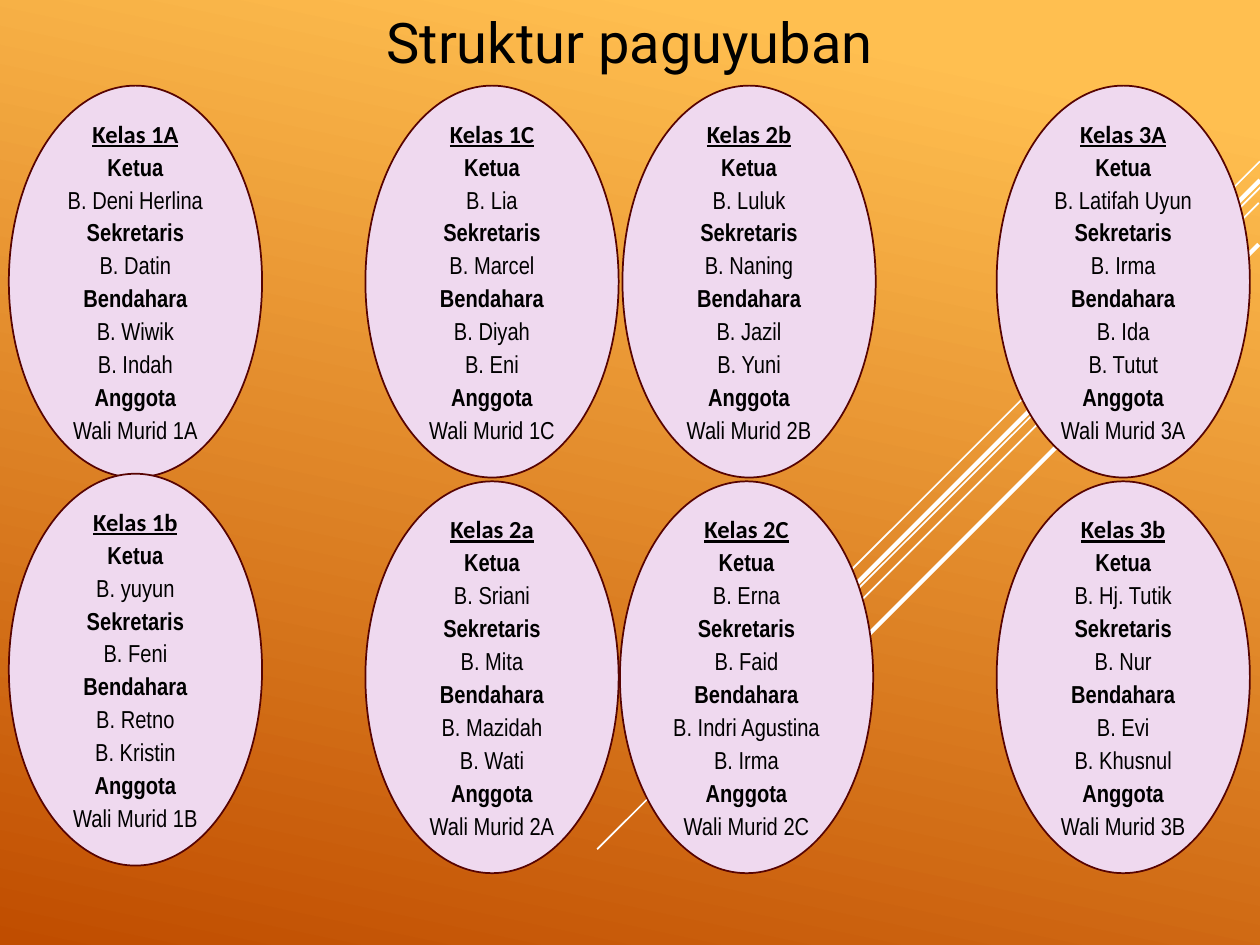
"""Build the slide showing the parents' association of each class."""
from lxml import etree
from pptx import Presentation
from pptx.dml.color import RGBColor
from pptx.enum.shapes import MSO_CONNECTOR, MSO_SHAPE
from pptx.enum.text import MSO_ANCHOR, PP_ALIGN
from pptx.oxml.ns import qn
from pptx.util import Inches, Pt

STRAIGHT = MSO_CONNECTOR.STRAIGHT
ELLIPSE = MSO_SHAPE.OVAL
MIDDLE = MSO_ANCHOR.MIDDLE
CENTER = PP_ALIGN.CENTER

BLACK = RGBColor(0x00, 0x00, 0x00)
WHITE = RGBColor(0xFF, 0xFF, 0xFF)
LILAC = RGBColor(0xEF, 0xD9, 0xEF)
MAROON = RGBColor(0x57, 0x04, 0x02)
LIGHT_ORANGE = RGBColor(0xFF, 0xBF, 0x50)
DARK_ORANGE = RGBColor(0xC0, 0x4D, 0x00)

STRIPES = [
    (10, 1.28, 6.57, 4.71, 1),
    (10.01, 1.48, 4.74, 6.74, 1),
    (9.99, 1.61, 5.71, 5.89, 1),
    (10, 1.43, 5.8, 5.63, 2.5),
    (9.99, 1.94, 6.24, 5.69, 2.5),
]

OVAL_WIDTH, OVAL_HEIGHT = 2.01, 3.11
TOP_ROW, BOTTOM_ROW = 0.68, 3.82
CLASSES = [
    (0.07, TOP_ROW, "1A", "Deni Herlina", "Datin", "Wiwik", "Indah"),
    (0.07, 3.76, "1b", "yuyun", "Feni", "Retno", "Kristin"),
    (4.94, TOP_ROW, "2b", "Luluk", "Naning", "Jazil", "Yuni"),
    (7.91, TOP_ROW, "3A", "Latifah Uyun", "Irma", "Ida", "Tutut"),
    (2.9, TOP_ROW, "1C", "Lia", "Marcel", "Diyah", "Eni"),
    (4.92, BOTTOM_ROW, "2C", "Erna", "Faid", "Indri Agustina", "Irma"),
    (2.9, BOTTOM_ROW, "2a", "Sriani", "Mita", "Mazidah", "Wati"),
    (7.91, BOTTOM_ROW, "3b", "Hj. Tutik", "Nur", "Evi", "Khusnul"),
]
ROLES = ("Ketua", "Sekretaris", "Bendahara", "Anggota")


def format_paragraph(paragraph, font_name, size, space_after):
    paragraph.alignment = CENTER
    paragraph.space_after = Pt(space_after)
    paragraph.font.name = font_name
    paragraph.font.size = Pt(size)
    paragraph.font.color.rgb = BLACK


presentation = Presentation()
presentation.slide_width = Inches(10)
presentation.slide_height = Inches(7.5)
slide = presentation.slides.add_slide(presentation.slide_layouts[5])

background = slide.background.fill
background.gradient()
background.gradient_angle = 258
for stop, position, color in zip(
    background.gradient_stops, (0.1, 1), (LIGHT_ORANGE, DARK_ORANGE)
):
    stop.position = position
    stop.color.rgb = color

for start_x, start_y, end_x, end_y, width in STRIPES:
    stripe = slide.shapes.add_connector(
        STRAIGHT, Inches(start_x), Inches(start_y), Inches(end_x), Inches(end_y)
    )
    stripe.line.color.rgb = WHITE
    stripe.line.width = Pt(width)
    etree.SubElement(stripe._element.spPr, qn("a:effectLst"))

title = slide.shapes.title
title.left, title.top = Inches(0), Inches(0)
title.width, title.height = Inches(10), Inches(0.65)
title.text_frame.text = "Struktur paguyuban"
title.text_frame.vertical_anchor = MIDDLE
format_paragraph(title.text_frame.paragraphs[0], "Roboto", 32, 6)

for left, top, name, chair, secretary, treasurer, second_treasurer in CLASSES:
    oval = slide.shapes.add_shape(
        ELLIPSE, Inches(left), Inches(top), Inches(OVAL_WIDTH), Inches(OVAL_HEIGHT)
    )
    oval.shadow.inherit = False
    oval.fill.solid()
    oval.fill.fore_color.rgb = LILAC
    oval.line.color.rgb = MAROON
    oval.line.width = Pt(1)

    heading = f"Kelas {name}"
    lines = [
        heading,
        "Ketua", f"B. {chair}",
        "Sekretaris", f"B. {secretary}",
        "Bendahara", f"B. {treasurer}", f"B. {second_treasurer}",
        "Anggota", f"Wali Murid {name.upper()}",
    ]
    text_frame = oval.text_frame
    text_frame.word_wrap = True
    text_frame.vertical_anchor = MIDDLE
    text_frame.text = "\n".join(lines)
    for paragraph in text_frame.paragraphs:
        is_heading = paragraph.text == heading
        format_paragraph(paragraph, "Calibri" if is_heading else "Arial Narrow", 14, 2)
        paragraph.font.bold = is_heading or paragraph.text in ROLES
        paragraph.font.underline = is_heading

presentation.save("out.pptx")
